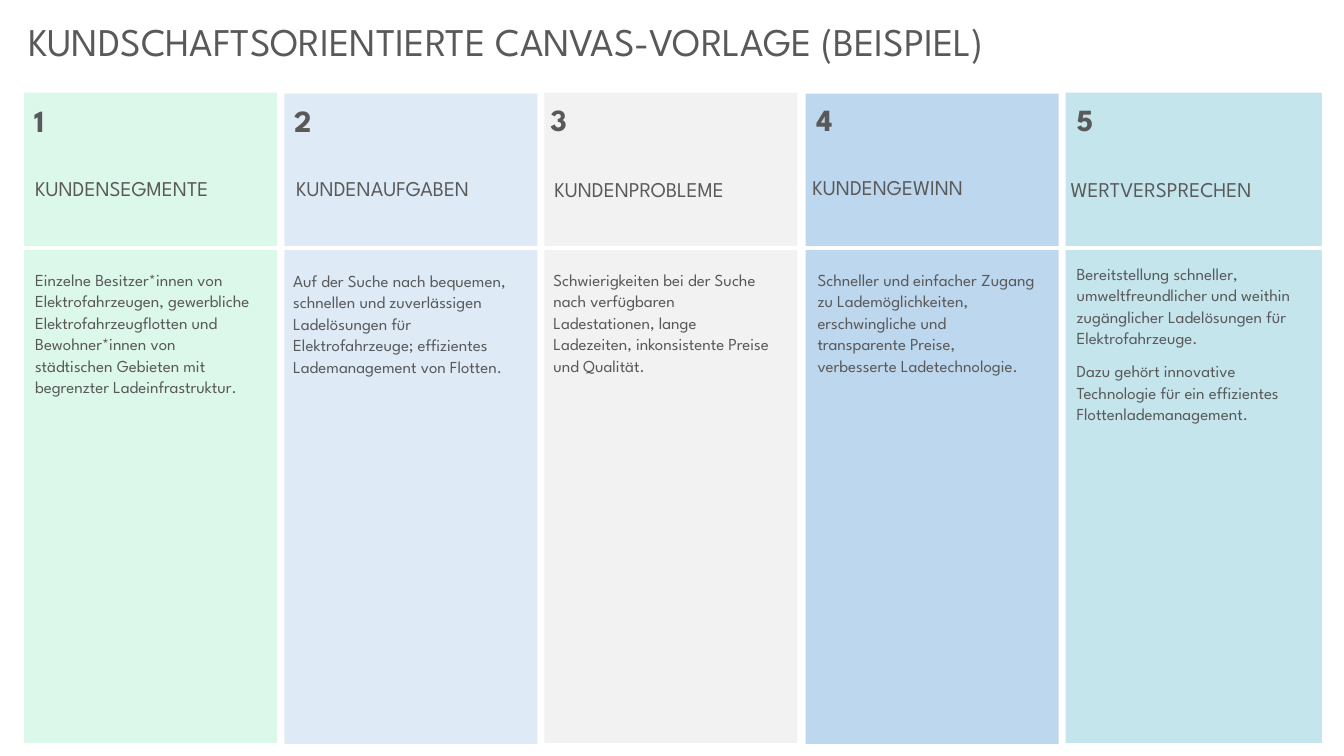
from pptx import Presentation
from pptx.dml.color import RGBColor
from pptx.enum import shapes, text
from pptx.oxml.ns import qn
from pptx.util import Inches, Pt
from lxml import etree


def rgb(value):
    return RGBColor.from_string(value)


def write(sp, *paragraphs, size=12, bold=False, line_spacing=None, after=0):
    tf = sp.text_frame
    tf.word_wrap = True
    tf.auto_size = text.MSO_AUTO_SIZE.NONE
    tf.vertical_anchor = text.MSO_ANCHOR.TOP
    for i, content in enumerate(paragraphs):
        p = tf.add_paragraph() if i else tf.paragraphs[0]
        p.alignment = text.PP_ALIGN.LEFT
        p.space_before, p.space_after = Pt(0), Pt(after)
        if line_spacing:
            p.line_spacing = line_spacing
        r = p.add_run()
        r.text = content
        r.font.name, r.font.size, r.font.bold = "League Spartan", Pt(size), bold
        r.font.color.rgb = rgb("595959")


# panel (left, top, width), fill, number (left, top), heading, its (left, top),
# body (left, top, width), body paragraphs
columns = [
    ((0.24, 0.92, 2.51), "DCF8EB", (0.24, 0.93), "KUNDENSEGMENTE", (0.25, 1.69), (0.25, 2.61, 2.38),
     ["Einzelne Besitzer*innen von Elektrofahrzeugen, gewerbliche Elektrofahrzeugflotten und "
      "Bewohner*innen von städtischen Gebieten mit begrenzter Ladeinfrastruktur."]),
    ((2.82, 0.93, 2.51), "DEEBF7", (2.82, 0.93), "KUNDENAUFGABEN", (2.84, 1.69), (2.81, 2.62, 2.35),
     ["Auf der Suche nach bequemen, schnellen und zuverlässigen Ladelösungen für "
      "Elektrofahrzeuge; effizientes Lademanagement von Flotten."]),
    ((5.4, 0.92, 2.51), "F2F2F2", (5.36, 0.92), "KUNDENPROBLEME", (5.4, 1.7), (5.39, 2.61, 2.35),
     ["Schwierigkeiten bei der Suche nach verfügbaren Ladestationen, lange Ladezeiten, "
      "inkonsistente Preise und Qualität."]),
    ((7.99, 0.93, 2.51), "BDD7EE", (8, 0.92), "KUNDENGEWINN", (7.96, 1.68), (8.01, 2.61, 2.38),
     ["Schneller und einfacher Zugang zu Lademöglichkeiten, erschwingliche und transparente "
      "Preise, verbesserte Ladetechnologie."]),
    ((10.57, 0.92, 2.54), "C5E5ED", (10.58, 0.92), "WERTVERSPRECHEN", (10.52, 1.7), (10.58, 2.55, 2.5),
     ["Bereitstellung schneller, umweltfreundlicher und weithin zugänglicher Ladelösungen für "
      "Elektrofahrzeuge.",
      "Dazu gehört innovative Technologie für ein effizientes Flottenlademanagement."]),
]

prs = Presentation()
prs.slide_width, prs.slide_height = Inches(13.33), Inches(7.5)
s = prs.slides.add_slide(prs.slide_layouts[5])

title = s.shapes.title
title.left, title.top = Inches(0.18), Inches(0.12)
title.width, title.height = Inches(12.95), Inches(0.57)
write(title, "KUNDSCHAFTSORIENTIERTE CANVAS-VORLAGE (BEISPIEL)", size=28)

for (left, top, width), fill, *_ in columns:
    panel = s.shapes.add_shape(shapes.MSO_SHAPE.RECTANGLE, Inches(left), Inches(top),
                               Inches(width), Inches(6.45))
    panel.shadow.inherit = False
    panel.fill.solid()
    panel.fill.fore_color.rgb = rgb(fill)
    panel.line.fill.background()

divider = s.shapes.add_connector(shapes.MSO_CONNECTOR.STRAIGHT, Inches(0.24), Inches(2.46),
                                 Inches(13.2), Inches(2.46))
divider.line.color.rgb = rgb("FFFFFF")
divider.line.width = Pt(2.25)
etree.SubElement(divider._element.spPr, qn("a:effectLst"))

for number, (_, _, number_at, heading, heading_at, body_at, body) in enumerate(columns, 1):
    boxes = [
        ((*number_at, 0.46, 0.64), [str(number)], dict(size=22, bold=True, line_spacing=1.07, after=8)),
        ((*heading_at, 2.5, 0.35), [heading], dict(size=15)),
        ((*body_at, 1.98 if len(body) > 1 else 1.57), body, dict(line_spacing=1.07, after=8)),
    ]
    for box, paragraphs, style in boxes:
        write(s.shapes.add_textbox(*map(Inches, box)), *paragraphs, **style)

prs.save("out.pptx")
